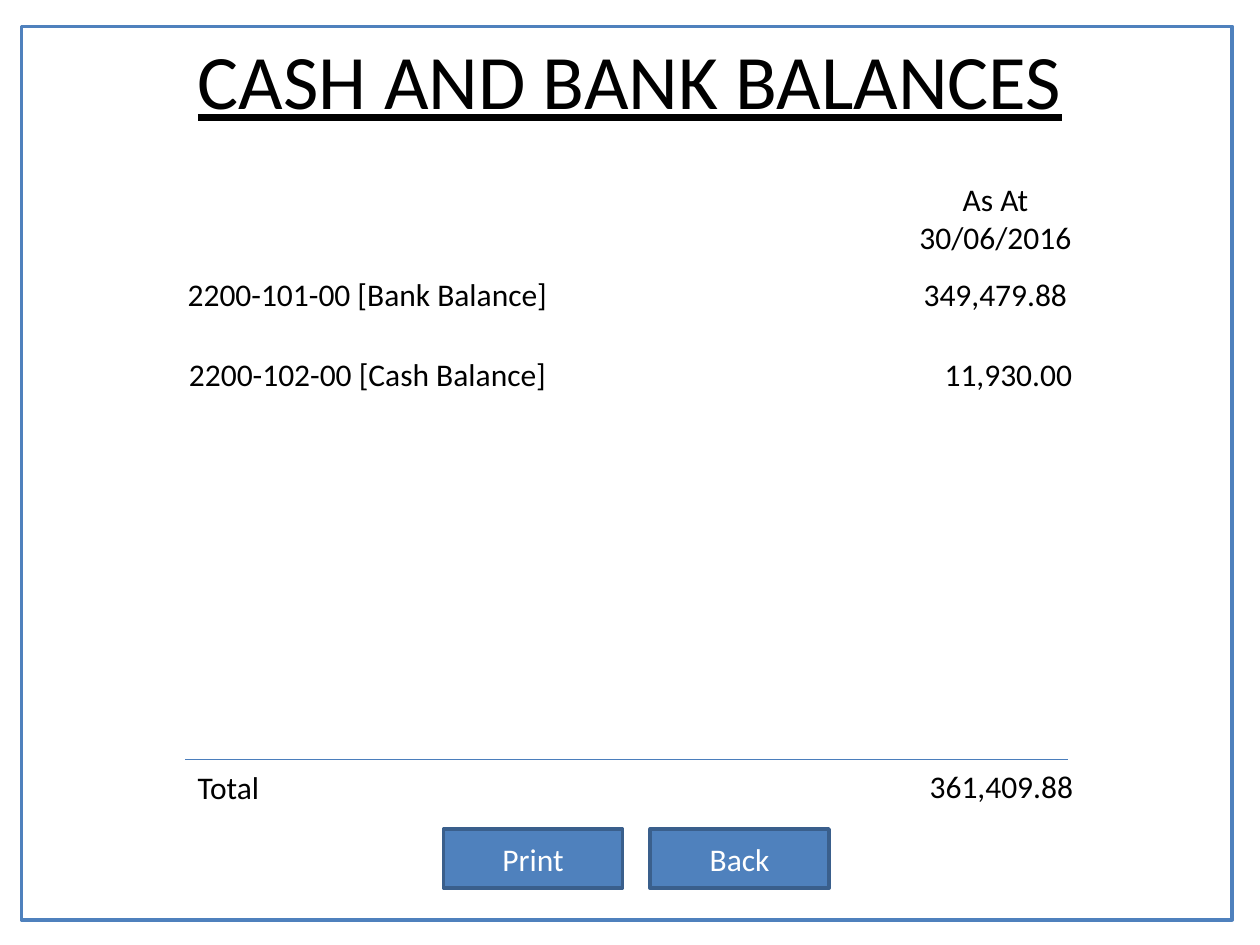
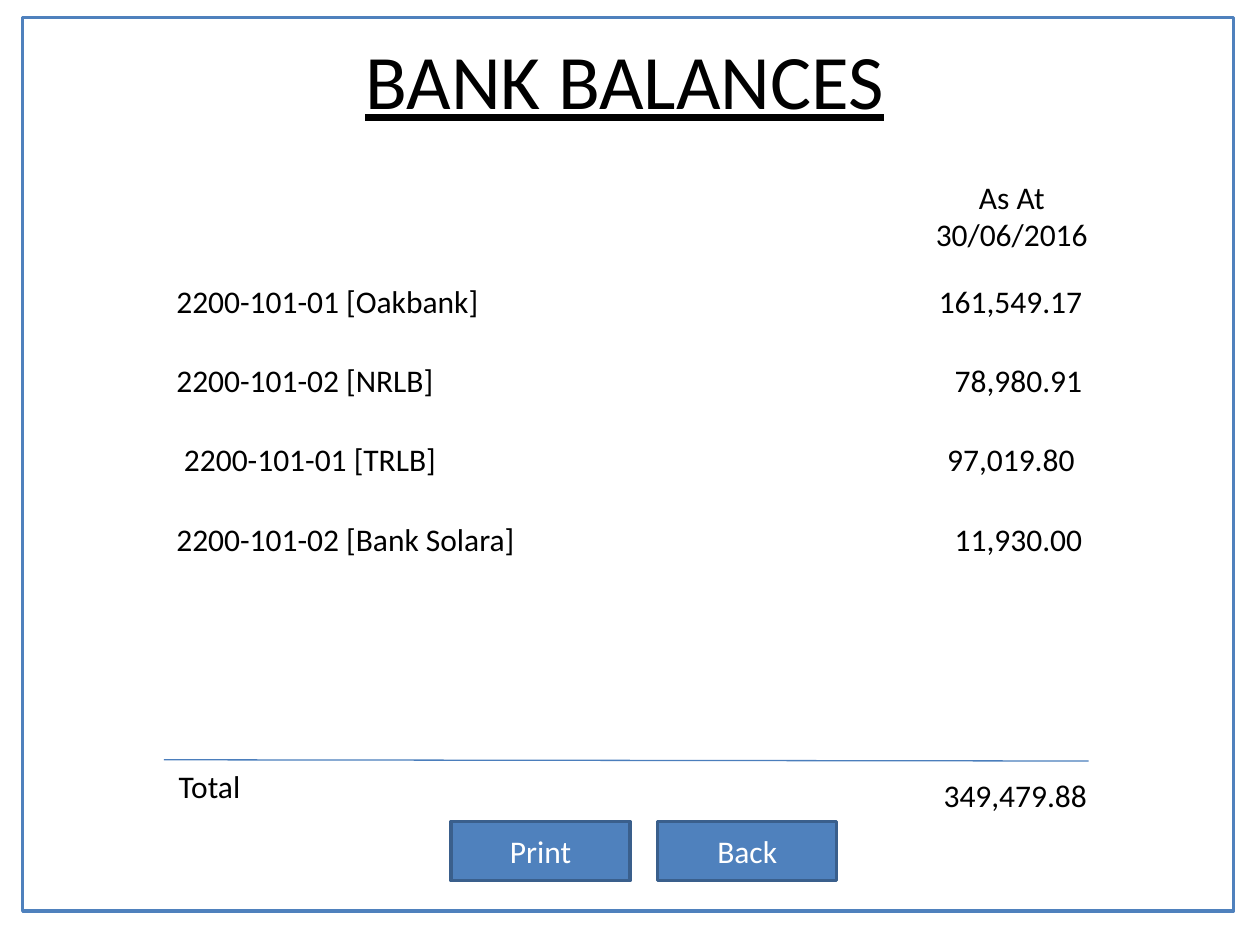
from lxml.etree import SubElement
from pptx import Presentation
from pptx.dml.color import RGBColor
from pptx.enum.shapes import MSO_CONNECTOR, MSO_SHAPE
from pptx.enum.text import MSO_ANCHOR, PP_ALIGN
from pptx.oxml.ns import qn
from pptx.util import Inches, Pt

FONT = "Calibri"
BLACK, WHITE = "000000", "FFFFFF"
BLUE, DARK_BLUE, RULE_BLUE = "4F81BD", "3A5F8C", "4B7EBC"
ROW_WIDTH, ROW_HEIGHT, ROW_PITCH = 8.06, 0.47, 0.63
BUTTON_WIDTH, BUTTON_HEIGHT, BUTTON_PITCH = 1.42, 0.47, 1.64


def color(hex_string):
    return RGBColor.from_string(hex_string)


class BalanceDeck:
    """Holds the shared style and the current slide of a balance report."""

    def __init__(self):
        self.presentation = Presentation()
        self.presentation.slide_width = Inches(10)
        self.presentation.slide_height = Inches(7.5)
        self.slide = None

    def add_lines(self, shape, lines, size=18, font_color=BLACK,
                  align=PP_ALIGN.LEFT, underline=None):
        frame = shape.text_frame
        for index, line in enumerate(lines):
            paragraph = frame.add_paragraph() if index else frame.paragraphs[0]
            paragraph.alignment = align
            run = paragraph.add_run()
            run.text = line
            run.font.name = FONT
            run.font.size = Pt(size)
            run.font.underline = underline
            run.font.color.rgb = color(font_color)

    def box(self, left, top, width, height, fill, line):
        shape = self.slide.shapes.add_shape(
            MSO_SHAPE.RECTANGLE, Inches(left), Inches(top), Inches(width), Inches(height))
        shape.shadow.inherit = False
        shape.fill.solid()
        shape.fill.fore_color.rgb = color(fill)
        shape.line.color.rgb = color(line)
        shape.line.width = Pt(2)
        return shape

    def start(self, title, left, width, frame_left, frame_top):
        self.slide = self.presentation.slides.add_slide(self.presentation.slide_layouts[5])
        border = self.box(frame_left, frame_top, 9.61, 7.09, WHITE, BLUE)
        heading = self.slide.shapes.title
        heading._element.addprevious(border._element)
        heading.left, heading.top = Inches(left), Inches(0.21)
        heading.width, heading.height = Inches(width), Inches(0.84)
        heading.text_frame.word_wrap = False
        heading.text_frame.vertical_anchor = MSO_ANCHOR.TOP
        self.add_lines(heading, [title], size=44, underline=True)

    def text(self, lines, left, top, width, height, align=PP_ALIGN.LEFT):
        shape = self.slide.shapes.add_textbox(
            Inches(left), Inches(top), Inches(width), Inches(height))
        shape.text_frame.word_wrap = False
        self.add_lines(shape, lines, align=align)
        return shape

    def date(self, left, top):
        self.text(["As At", "30/06/2016"], left, top, 1.42, 0.71, PP_ALIGN.CENTER)

    def rows(self, left, top, rows):
        for index, (label, amount, label_left, amount_right) in enumerate(rows):
            shape = self.text([f"{label}\t{amount}"], left, top + index * ROW_PITCH,
                              ROW_WIDTH, ROW_HEIGHT)
            frame = shape.text_frame
            frame.word_wrap = True
            frame.vertical_anchor = MSO_ANCHOR.MIDDLE
            frame.margin_left = Inches(label_left - left)
            properties = frame.paragraphs[0]._p.get_or_add_pPr()
            tabs = SubElement(properties, qn("a:tabLst"))
            SubElement(tabs, qn("a:tab"), pos=str(Inches(amount_right - label_left)), algn="r")

    def rule(self, start, end):
        line = self.slide.shapes.add_connector(
            MSO_CONNECTOR.STRAIGHT, *map(Inches, start), *map(Inches, end))
        line.line.color.rgb = color(RULE_BLUE)
        line.line.width = Pt(0.75)
        SubElement(line._element.spPr, qn("a:effectLst"))

    def total(self, amount, label_at, amount_at):
        self.text(["Total"], *label_at, 0.7, 0.4)
        self.text([amount], *amount_at, 1.35, 0.4)

    def buttons(self, left, top):
        for index, label in enumerate(["Print", "Back"]):
            button = self.box(left + index * BUTTON_PITCH, top,
                              BUTTON_WIDTH, BUTTON_HEIGHT, BLUE, DARK_BLUE)
            button.text_frame.vertical_anchor = MSO_ANCHOR.MIDDLE
            self.add_lines(button, [label], font_color=WHITE, align=PP_ALIGN.CENTER)


def main():
    deck = BalanceDeck()

    deck.start("CASH AND BANK BALANCES", 1.47, 7.13, 0.17, 0.21)
    deck.date(7.19, 1.38)
    deck.rows(0.98, 2.1, [
        ("2200-101-00 [Bank Balance]", "349,479.88", 1.49, 8.47),
        ("2200-102-00 [Cash Balance]", "11,930.00", 1.5, 8.51),
    ])
    deck.rule((1.47, 6.03), (8.48, 6.03))
    deck.total("361,409.88", (1.47, 6.05), (7.28, 6.04))
    deck.buttons(3.52, 6.58)

    deck.start("BANK BALANCES", 2.8, 4.36, 0.18, 0.14)
    deck.date(7.32, 1.36)
    deck.rows(0.97, 2.15, [
        ("2200-101-01 [Oakbank]", "161,549.17", 1.4, 8.59),
        ("2200-101-02 [NRLB]", "78,980.91", 1.4, 8.59),
        ("2200-101-01 [TRLB]", "97,019.80", 1.46, 8.53),
        ("2200-101-02 [Bank Solara]", "11,930.00", 1.4, 8.59),
    ])
    deck.rule((1.3, 6.03), (8.64, 6.04))
    deck.total("349,479.88", (1.32, 6.04), (7.39, 6.11))
    deck.buttons(3.58, 6.52)

    deck.presentation.save("out.pptx")


if __name__ == "__main__":
    main()
